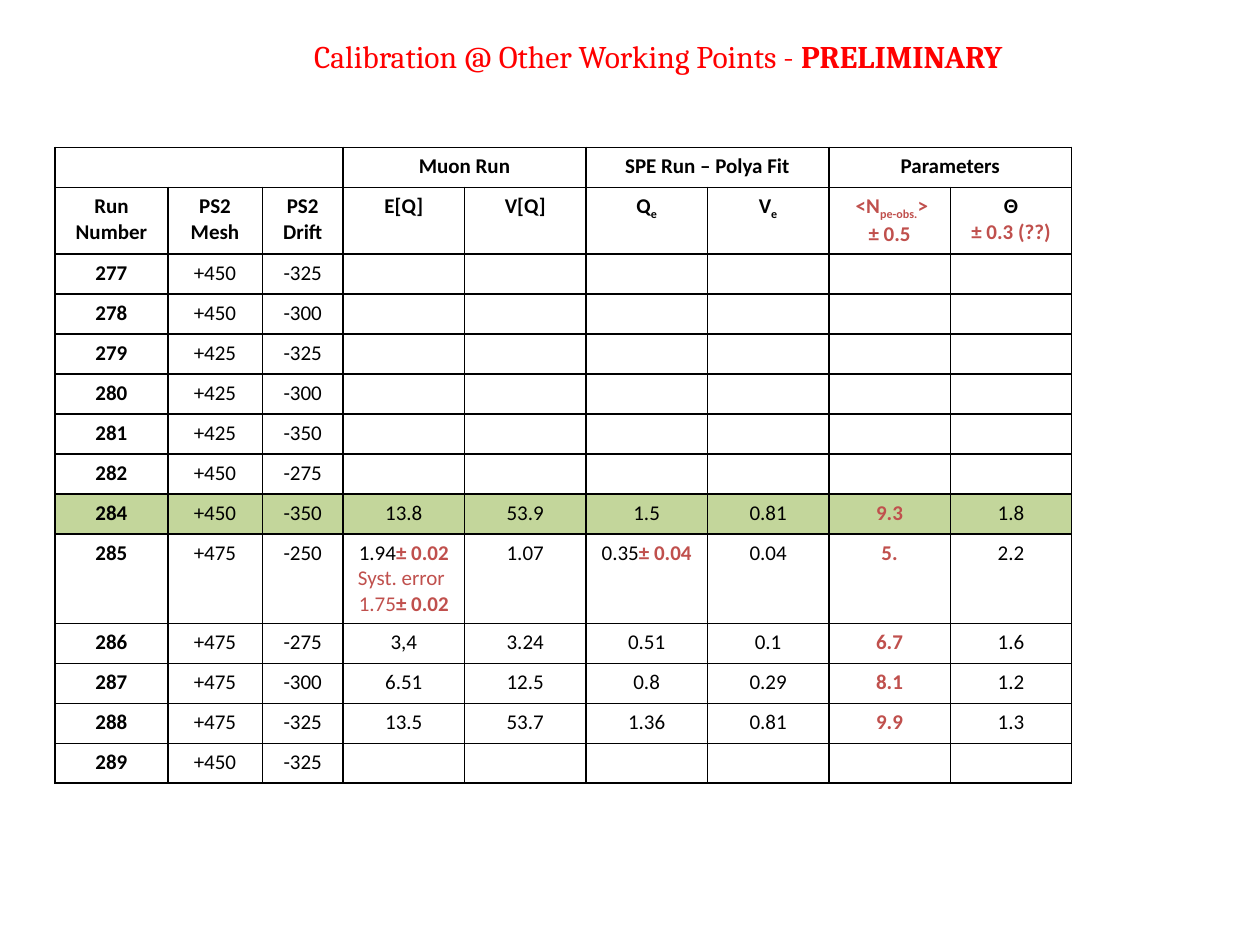
"""Build the slide with the calibration table for the other working points."""
from dataclasses import dataclass

import lxml.etree
import pptx
import pptx.dml.color
import pptx.enum.text
import pptx.oxml.ns
import pptx.slide
import pptx.table
import pptx.text.text
import pptx.util

COLORS = {"ink": "000000", "estimate": "C0504D", "title": "FF0000", "highlight": "C3D69B"}
COLUMN_WIDTHS = [64.4, 54, 46.2] + [69.4] * 6
ROW_HEIGHT = 22.86
HIGHLIGHTED_RUN = "284"
ESTIMATE_COLUMN = 7


@dataclass
class Span:
    text: str
    color: str = "ink"
    bold: bool = False
    subscript: bool = False


Lines = list[list[Span]]

GROUPS = {3: "Muon Run", 5: "SPE Run – Polya Fit", 7: "Parameters"}

HEADINGS: list[Lines] = [
    [[Span(text, bold=True)]]
    for text in ("Run Number", "PS2 Mesh", "PS2 Drift", "E[Q]", "V[Q]")
] + [
    [[Span(symbol, bold=True), Span("e", bold=True, subscript=True)]] for symbol in "QV"
] + [
    [
        [
            Span(" <Ν", "estimate", True),
            Span("pe-obs.", "estimate", True, True),
            Span(">", "estimate", True),
        ],
        [Span("± 0.5", "estimate", True)],
    ],
    [[Span("Θ", bold=True)], [Span("± 0.3 (??)", "estimate", True)]],
]

MUON_MEAN_285: Lines = [
    [Span("1.94"), Span("± 0.02", "estimate", True)],
    [Span("Syst. error ", "estimate")],
    [Span("1.75", "estimate"), Span("± 0.02", "estimate", True)],
]
CHARGE_285: Lines = [[Span("0.35"), Span("± 0.04", "estimate", True)]]

RUNS: list[tuple[str | Lines, ...]] = [
    ("277", "+450", "-325"),
    ("278", "+450", "-300"),
    ("279", "+425", "-325"),
    ("280", "+425", "-300"),
    ("281", "+425", "-350"),
    ("282", "+450", "-275"),
    ("284", "+450", "-350", "13.8", "53.9", "1.5", "0.81", "9.3", "1.8"),
    ("285", "+475", "-250", MUON_MEAN_285, "1.07", CHARGE_285, "0.04", "5.", "2.2"),
    ("286", "+475", "-275", "3,4", "3.24", "0.51", "0.1", "6.7", "1.6"),
    ("287", "+475", "-300", "6.51", "12.5", "0.8", "0.29", "8.1", "1.2"),
    ("288", "+475", "-325", "13.5", "53.7", "1.36", "0.81", "9.9", "1.3"),
    ("289", "+450", "-325"),
]


def rgb(name: str) -> pptx.dml.color.RGBColor:
    return pptx.dml.color.RGBColor.from_string(COLORS[name])


def add_element(parent, tag: str, **attributes: str):
    return lxml.etree.SubElement(parent, pptx.oxml.ns.qn(tag), attributes)


def write_lines(
    frame: pptx.text.text.TextFrame, lines: Lines, font_name: str, size: float
) -> None:
    for index, line in enumerate(lines):
        paragraph = frame.add_paragraph() if index else frame.paragraphs[0]
        paragraph.alignment = pptx.enum.text.PP_ALIGN.CENTER
        paragraph.font.name = font_name
        paragraph.font.size = pptx.util.Pt(size)
        for span in line:
            run = paragraph.add_run()
            run.text = span.text
            run.font.bold = span.bold
            run.font.color.rgb = rgb(span.color)
            if span.subscript:
                run._r.get_or_add_rPr().set("baseline", "-25000")
        if not line:
            add_element(paragraph._p, "a:endParaRPr", sz=str(round(size * 100)))


def format_cell(cell: pptx.table._Cell, highlighted: bool) -> None:
    properties = cell._tc.get_or_add_tcPr()
    for side in ("a:lnL", "a:lnR", "a:lnT", "a:lnB"):
        border = add_element(properties, side, w=str(pptx.util.Pt(1)))
        fill = add_element(border, "a:solidFill")
        add_element(fill, "a:srgbClr", val=COLORS["ink"])
    if highlighted:
        cell.fill.solid()
        cell.fill.fore_color.rgb = rgb("highlight")
    else:
        cell.fill.background()


def run_lines(value: str | Lines, column: int) -> Lines:
    if not isinstance(value, str):
        return value
    color = "estimate" if column == ESTIMATE_COLUMN else "ink"
    return [[Span(value, color, bold=column in (0, ESTIMATE_COLUMN))]]


def table_rows() -> list[list[Lines]]:
    columns = range(len(COLUMN_WIDTHS))
    empty: Lines = [[]]
    groups = [[[Span(GROUPS[c], bold=True)]] if c in GROUPS else empty for c in columns]
    runs = [
        [run_lines(run[c], c) if c < len(run) else empty for c in columns] for run in RUNS
    ]
    return [groups, HEADINGS, *runs]


def add_title(slide: pptx.slide.Slide) -> None:
    title = slide.shapes.title
    title.left, title.top = pptx.util.Pt(164.9), pptx.util.Pt(17.3)
    title.width, title.height = pptx.util.Pt(422.6), pptx.util.Pt(51.1)
    frame = title.text_frame
    frame.word_wrap = True
    frame.auto_size = pptx.enum.text.MSO_AUTO_SIZE.NONE
    frame.vertical_anchor = pptx.enum.text.MSO_ANCHOR.TOP
    spans = [
        Span("Calibration @ Other Working Points - ", "title"),
        Span("PRELIMINARY", "title", True),
    ]
    write_lines(frame, [spans], "Cambria", 18)


def add_calibration_table(slide: pptx.slide.Slide) -> None:
    rows = table_rows()
    table = slide.shapes.add_table(
        len(rows), len(COLUMN_WIDTHS),
        pptx.util.Pt(31.5), pptx.util.Pt(84.2),
        pptx.util.Pt(sum(COLUMN_WIDTHS)), pptx.util.Pt(ROW_HEIGHT * len(rows)),
    ).table
    table.first_row = table.horz_banding = False
    for column, width in zip(table.columns, COLUMN_WIDTHS):
        column.width = pptx.util.Pt(width)
    for row_index, row in enumerate(rows):
        table.rows[row_index].height = pptx.util.Pt(ROW_HEIGHT)
        highlighted = row[0] == run_lines(HIGHLIGHTED_RUN, 0)
        for column_index, lines in enumerate(row):
            cell = table.cell(row_index, column_index)
            format_cell(cell, highlighted)
            write_lines(cell.text_frame, lines, "Calibri", 12)
    table.cell(0, 0).merge(table.cell(0, 2))
    for first in GROUPS:
        table.cell(0, first).merge(table.cell(0, first + 1))


def main() -> None:
    deck = pptx.Presentation()
    deck.slide_width, deck.slide_height = pptx.util.Pt(720), pptx.util.Pt(540)
    slide = deck.slides.add_slide(deck.slide_layouts.get_by_name("Title Only"))
    add_title(slide)
    add_calibration_table(slide)
    deck.save("out.pptx")


if __name__ == "__main__":
    main()
